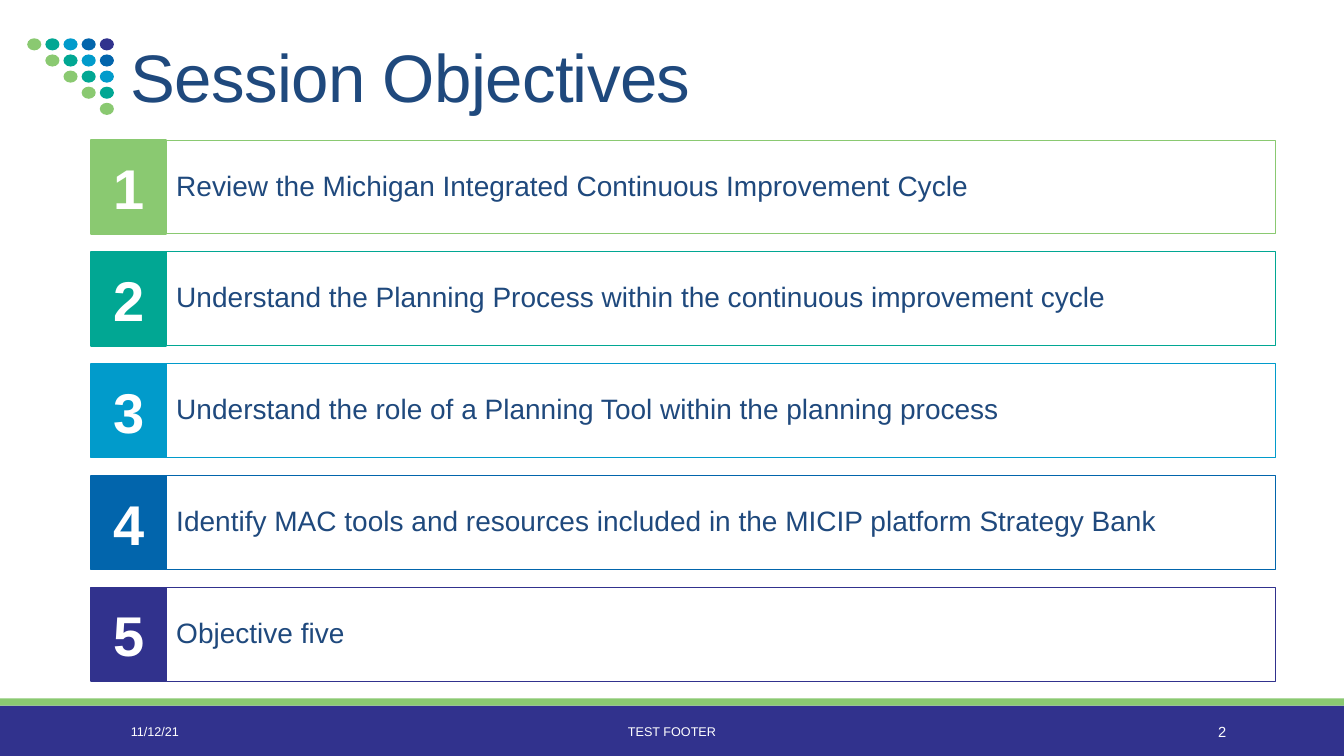
from pptx import Presentation
from pptx.dml.color import RGBColor
from pptx.enum.shapes import MSO_SHAPE
from pptx.enum.text import MSO_ANCHOR, PP_ALIGN
from pptx.util import Inches, Pt

GREEN = RGBColor(0x8A, 0xC9, 0x71)
TEAL = RGBColor(0x01, 0xA7, 0x93)
SKY = RGBColor(0x01, 0x9B, 0xCB)
BLUE = RGBColor(0x02, 0x65, 0xAC)
INDIGO = RGBColor(0x31, 0x32, 0x8D)
NAVY = RGBColor(0x1F, 0x49, 0x7D)
WHITE = RGBColor(0xFF, 0xFF, 0xFF)

WIDE, HIGH = 13.33, 7.5
TITLE = "Session Objectives"
GOALS = [
    ("Review the Michigan Integrated Continuous Improvement Cycle", GREEN),
    ("Understand the Planning Process within the continuous improvement cycle", TEAL),
    ("Understand the role of a Planning Tool within the planning process", SKY),
    ("Identify MAC tools and resources included in the MICIP platform Strategy Bank", BLUE),
    ("Objective five", INDIGO),
]
FOOTER = [
    ("11/12/21", 1.2, 2.7, 9, PP_ALIGN.LEFT),
    ("TEST FOOTER", 4.03, 5.27, 9, PP_ALIGN.CENTER),
    ("2", 10.83, 1.43, 10.5, PP_ALIGN.RIGHT),
]
BANDS = [(7, 0.5, INDIGO), (6.93, 0.07, GREEN)]
LEFT, TOP, STEP = 0.9, 1.39, 1.11
BADGE, BAR, TALL = 0.75, 11, 0.93
DOT_LEFT, DOT_TOP, DOT_WIDE, DOT_HIGH = 0.27, 0.38, 0.14, 0.12
DOT_COL, DOT_ROW = 0.18, 0.16


def write(shape, text, size, color, align=PP_ALIGN.LEFT, bold=False, anchor=MSO_ANCHOR.MIDDLE):
    """Put one styled run in a shape and return its run."""
    frame = shape.text_frame
    frame.word_wrap = True
    frame.vertical_anchor = anchor
    line = frame.paragraphs[0]
    line.alignment = align
    run = line.add_run()
    run.text = text
    font = run.font
    font.name, font.size, font.bold = "Arial", Pt(size), bold
    font.color.rgb = color
    return run


def draw(slide, kind, box, fill=None, edge=None, weight=1):
    """Add a flat shape with an optional fill and edge."""
    shape = slide.shapes.add_shape(kind, *map(Inches, box))
    shape.shadow.inherit = False
    if fill is None:
        shape.fill.background()
    else:
        shape.fill.solid()
        shape.fill.fore_color.rgb = fill
    if edge is None:
        shape.line.fill.background()
    else:
        shape.line.color.rgb = edge
        shape.line.width = Pt(weight)
    return shape


def label(slide, box):
    """Add an empty text box."""
    return slide.shapes.add_textbox(*map(Inches, box))


def main():
    """Build the slide and save it."""
    deck = Presentation()
    deck.slide_width, deck.slide_height = Inches(WIDE), Inches(HIGH)
    slide = deck.slides.add_slide(deck.slide_layouts[6])

    for top, tall, color in BANDS:
        draw(slide, MSO_SHAPE.RECTANGLE, (0, top, WIDE, tall), color)

    hues = [color for _, color in GOALS]
    for row in range(len(hues)):
        for col in range(row, len(hues)):
            spot = (DOT_LEFT + col * DOT_COL, DOT_TOP + row * DOT_ROW, DOT_WIDE, DOT_HIGH)
            draw(slide, MSO_SHAPE.OVAL, spot, hues[col - row])

    head = label(slide, (1.2, 0.31, 11, 0.89))
    run = write(head, TITLE, 48, NAVY, anchor=MSO_ANCHOR.BOTTOM)
    run.font._element.set("spc", "-50")
    head.text_frame.paragraphs[0].line_spacing = 0.85

    for row, (goal, color) in enumerate(GOALS):
        top = TOP + row * STEP
        bar = draw(slide, MSO_SHAPE.RECTANGLE, (LEFT + BADGE, top, BAR, TALL), None, color, 0.75)
        write(bar, goal, 20, NAVY)
        bar.text_frame.margin_left, bar.text_frame.margin_right = Inches(0.1), 0
        bar.text_frame.paragraphs[0].line_spacing = 0.9
        badge = draw(slide, MSO_SHAPE.RECTANGLE, (LEFT, top, BADGE, TALL), color, color, 1.25)
        write(badge, str(row + 1), 40, WHITE, PP_ALIGN.CENTER, True)

    for text, left, wide, size, align in FOOTER:
        write(label(slide, (left, 7.06, wide, 0.4)), text, size, WHITE, align)

    deck.save("out.pptx")


if __name__ == "__main__":
    main()
